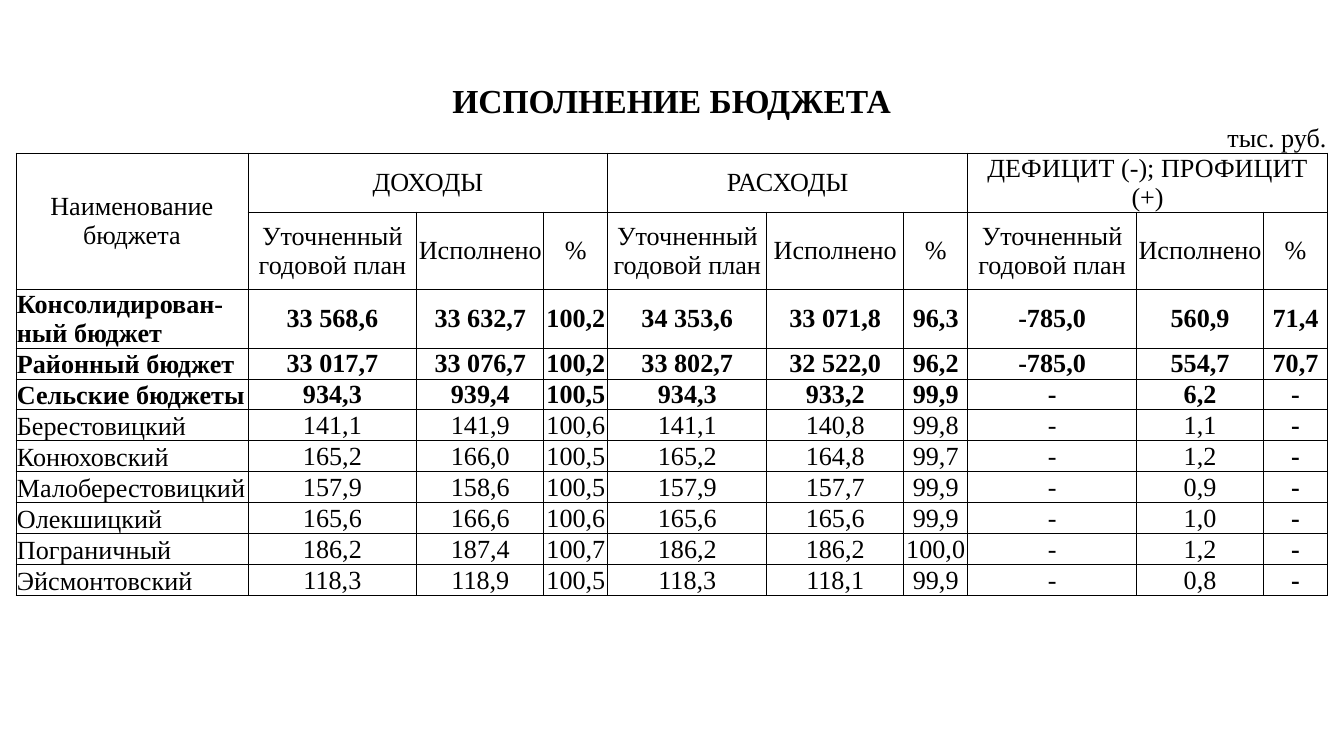
from dataclasses import dataclass

import lxml.etree
import pptx
import pptx.dml.color
import pptx.enum.text
import pptx.oxml.ns
import pptx.table
import pptx.util

PX = 9144000 / 1344
FONT = "Times New Roman"
COLORS = {"ink": "000000", "paper": "FFFFFF"}
LEFT, CENTER, RIGHT = (
    pptx.enum.text.PP_ALIGN.LEFT,
    pptx.enum.text.PP_ALIGN.CENTER,
    pptx.enum.text.PP_ALIGN.RIGHT,
)
MIDDLE = pptx.enum.text.MSO_ANCHOR.MIDDLE
BOTTOM = pptx.enum.text.MSO_ANCHOR.BOTTOM

COLUMN_WIDTHS = [232, 135, 34, 88, 39, 64, 159, 28, 109, 12, 52, 169, 70, 57, 64]
ROW_HEIGHTS = [38, 30, 59, 77, 59] + [31] * 8
TITLE_ROW, UNIT_ROW, GROUP_ROW, HEADING_ROW, FIRST_BUDGET_ROW = range(5)


@dataclass(frozen=True)
class Span:
    column: int
    width: int = 1


@dataclass(frozen=True)
class Budget:
    name: str
    figures: str
    bold: bool = False


UNIT_SPANS = [Span(2, 2), Span(4, 2), Span(6, 2), Span(8, 2), Span(11, 2), Span(13, 2)]
GROUPS = {
    "ДОХОДЫ": Span(1, 5),
    "РАСХОДЫ": Span(6, 5),
    "ДЕФИЦИТ (-); ПРОФИЦИТ (+)": Span(11, 4),
}
FIGURE_SPANS = [
    Span(1, 2), Span(3, 2), Span(5),
    Span(6), Span(7, 2), Span(9, 2),
    Span(11), Span(12, 2), Span(14),
]
HEADINGS = ["Уточненный годовой план", "Исполнено", "%"] * 3
BUDGETS = [
    Budget("Консолидирован-ный бюджет",
           "33 568,6|33 632,7|100,2|34 353,6|33 071,8|96,3|-785,0|560,9|71,4", True),
    Budget("Районный бюджет",
           "33 017,7|33 076,7|100,2|33 802,7|32 522,0|96,2|-785,0|554,7|70,7", True),
    Budget("Сельские бюджеты", "934,3|939,4|100,5|934,3|933,2|99,9|-|6,2|-", True),
    Budget("Берестовицкий", "141,1|141,9|100,6|141,1|140,8|99,8|-|1,1|-"),
    Budget("Конюховский", "165,2|166,0|100,5|165,2|164,8|99,7|-|1,2|-"),
    Budget("Малоберестовицкий", "157,9|158,6|100,5|157,9|157,7|99,9|-|0,9|-"),
    Budget("Олекшицкий", "165,6|166,6|100,6|165,6|165,6|99,9|-|1,0|-"),
    Budget("Пограничный", "186,2|187,4|100,7|186,2|186,2|100,0|-|1,2|-"),
    Budget("Эйсмонтовский", "118,3|118,9|100,5|118,3|118,1|99,9|-|0,8|-"),
]


def px(length: int) -> int:
    return round(length * PX)


def add_child(parent, tag: str, **attributes: str):
    return lxml.etree.SubElement(parent, pptx.oxml.ns.qn(tag), attributes)


def draw_borders(cell: pptx.table._Cell, visible_sides: str) -> None:
    properties = cell._tc.get_or_add_tcPr()
    for side in "LRTB":
        border = add_child(properties, f"a:ln{side}", w=str(pptx.util.Pt(0.5)))
        if side in visible_sides:
            ink = add_child(border, "a:solidFill")
            add_child(ink, "a:srgbClr", val=COLORS["ink"])
        else:
            add_child(border, "a:noFill")


def prepare_cell(cell: pptx.table._Cell, row: int) -> None:
    draw_borders(cell, {TITLE_ROW: "", UNIT_ROW: "B"}.get(row, "LRTB"))
    cell.fill.solid()
    cell.fill.fore_color.rgb = pptx.dml.color.RGBColor.from_string(COLORS["paper"])
    cell.margin_left = cell.margin_right = cell.margin_top = px(1)
    cell.margin_bottom = px(1) if row >= FIRST_BUDGET_ROW else 0
    add_child(cell.text_frame.paragraphs[0]._p, "a:endParaRPr", sz="1400")


def write(cell: pptx.table._Cell, text: str, bold: bool = False, size: int = 14,
          align=CENTER, anchor=MIDDLE) -> None:
    cell.text = text
    cell.vertical_anchor = anchor
    for paragraph in cell.text_frame.paragraphs:
        paragraph.alignment = align
        paragraph.font.name = FONT
        paragraph.font.size = pptx.util.Pt(size)
        paragraph.font.bold = bold
        paragraph.font.color.rgb = pptx.dml.color.RGBColor.from_string(COLORS["ink"])


def merge(table: pptx.table.Table, row: int, span: Span, height: int = 1) -> pptx.table._Cell:
    first = table.cell(row, span.column)
    if span.width > 1 or height > 1:
        first.merge(table.cell(row + height - 1, span.column + span.width - 1))
    return first


def write_headings(table: pptx.table.Table) -> None:
    write(merge(table, TITLE_ROW, Span(0, len(COLUMN_WIDTHS))),
          "ИСПОЛНЕНИЕ БЮДЖЕТА", bold=True, size=18)
    for span in UNIT_SPANS:
        merge(table, UNIT_ROW, span)
    write(table.cell(UNIT_ROW, UNIT_SPANS[-1].column), "тыс. руб.", align=RIGHT, anchor=BOTTOM)
    write(merge(table, GROUP_ROW, Span(0), height=2), "Наименование\nбюджета")
    for group, span in GROUPS.items():
        write(merge(table, GROUP_ROW, span), group)
    for heading, span in zip(HEADINGS, FIGURE_SPANS):
        write(merge(table, HEADING_ROW, span), heading)


def write_budget(table: pptx.table.Table, row: int, budget: Budget) -> None:
    name_cell = table.cell(row, 0)
    name_cell.margin_bottom = 0
    write(name_cell, budget.name, budget.bold, align=LEFT, anchor=BOTTOM)
    for span, figure in zip(FIGURE_SPANS, budget.figures.split("|")):
        bold = budget.bold or span == FIGURE_SPANS[-1]
        write(merge(table, row, span), figure, bold)


def main() -> None:
    presentation = pptx.Presentation()
    presentation.slide_width = px(1344)
    presentation.slide_height = px(756)
    slide = presentation.slides.add_slide(presentation.slide_layouts[6])

    budget_table = slide.shapes.add_table(
        len(ROW_HEIGHTS), len(COLUMN_WIDTHS),
        px(16), px(82), px(sum(COLUMN_WIDTHS)), px(sum(ROW_HEIGHTS)),
    ).table
    budget_table.first_row = budget_table.horz_banding = False
    for column, width in zip(budget_table.columns, COLUMN_WIDTHS):
        column.width = px(width)
    for index, height in enumerate(ROW_HEIGHTS):
        budget_table.rows[index].height = px(height)
        for cell in budget_table.rows[index].cells:
            prepare_cell(cell, index)

    write_headings(budget_table)
    for row, budget in enumerate(BUDGETS, FIRST_BUDGET_ROW):
        write_budget(budget_table, row, budget)
    presentation.save("out.pptx")


if __name__ == "__main__":
    main()
